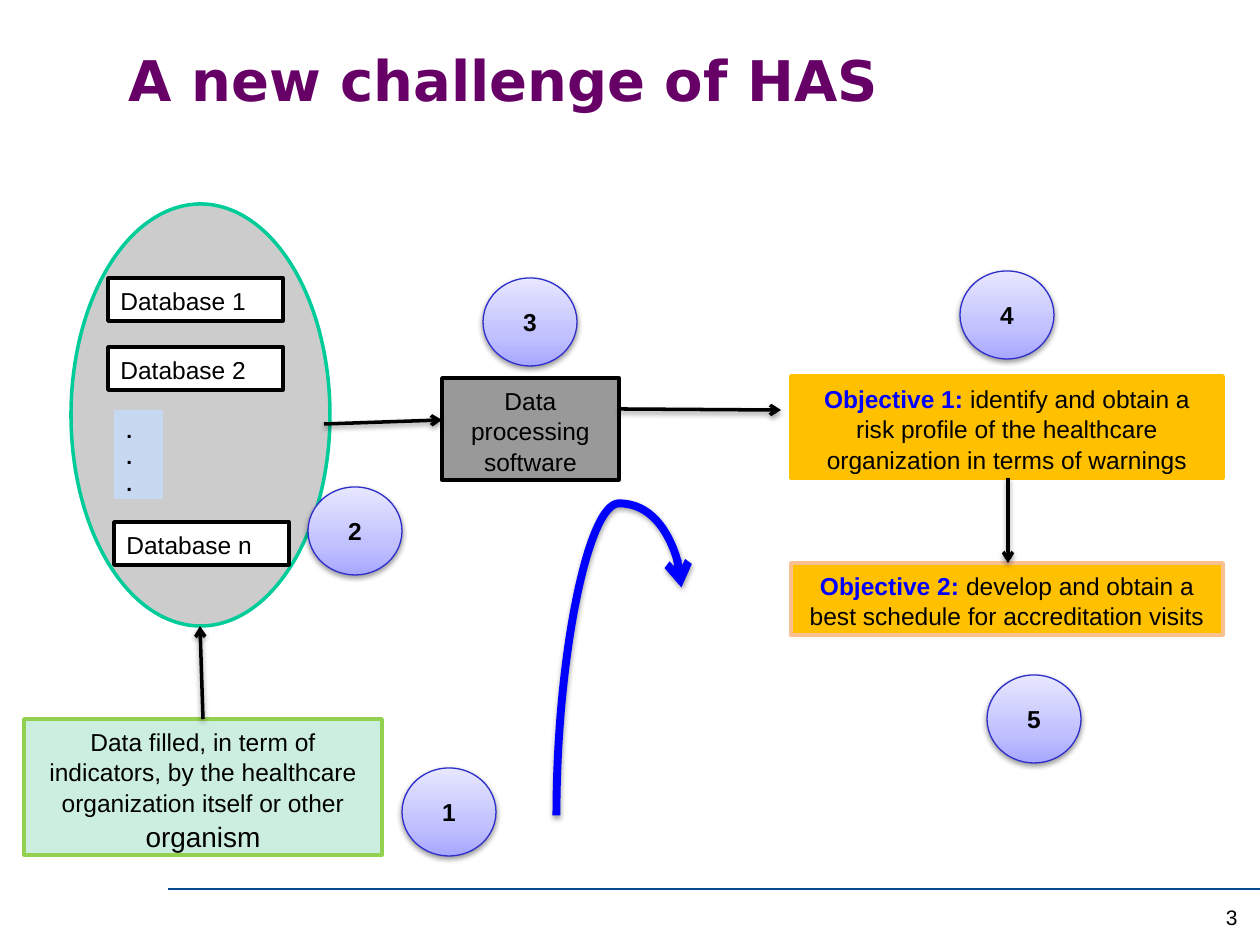
from copy import deepcopy

from lxml.etree import SubElement
from pptx import Presentation
from pptx.dml.color import RGBColor
from pptx.enum.shapes import MSO_CONNECTOR as CONNECTOR, MSO_SHAPE as SHAPE
from pptx.enum.text import MSO_ANCHOR as ANCHOR, PP_ALIGN as ALIGN
from pptx.oxml.ns import qn
from pptx.util import Pt

PX = 914400 / 126  # EMU in one pixel

BLACK = RGBColor(0x00, 0x00, 0x00)
WHITE = RGBColor(0xFF, 0xFF, 0xFF)
PURPLE = RGBColor(0x66, 0x00, 0x66)
BLUE = RGBColor(0x00, 0x00, 0xFF)
NAVY = RGBColor(0x00, 0x48, 0x90)
TEAL = RGBColor(0x00, 0xCC, 0x99)
LIGHT_GRAY = RGBColor(0xCC, 0xCC, 0xCC)
GRAY = RGBColor(0x99, 0x99, 0x99)
PALE_BLUE = RGBColor(0xC6, 0xD9, 0xF1)
MINT = RGBColor(0xCC, 0xEE, 0xDF)
GREEN = RGBColor(0x92, 0xD0, 0x50)
AMBER = RGBColor(0xFF, 0xC0, 0x00)
PEACH = RGBColor(0xFA, 0xC0, 0x90)
BADGE_LINE = RGBColor(0x2E, 0x2E, 0xCB)
BADGE_STOPS = [
    (0, RGBColor(0xA7, 0xA7, 0xFF)),
    (0.35, RGBColor(0xC1, 0xC1, 0xFF)),
    (1, RGBColor(0xE7, 0xE7, 0xFF)),
]


def add_text(shape, text, size=14, color=BLACK, bold=False, font="Arial",
             align=ALIGN.CENTER, anchor=ANCHOR.TOP, spacing=1.05):
    """Append a run to the last paragraph; each newline starts another one."""
    frame = shape.text_frame
    frame.word_wrap = True
    frame.vertical_anchor = anchor
    for index, line in enumerate(text.split("\n")):
        paragraph = frame.add_paragraph() if index else frame.paragraphs[-1]
        paragraph.alignment = align
        paragraph.line_spacing = spacing
        run = paragraph.add_run()
        run.text = line
        run.font.name = font
        run.font.size = Pt(size)
        run.font.bold = bold
        run.font.color.rgb = color


def add_shadow(shape):
    """Give a soft shadow straight below; call after the line is set."""
    properties = shape._element.spPr
    effects = SubElement(properties, qn("a:effectLst"))
    shadow = SubElement(effects, qn("a:outerShdw"), blurRad=str(Pt(3.1)),
                        dist=str(Pt(1.6)), dir="5400000", rotWithShape="0")
    color = SubElement(shadow, qn("a:srgbClr"), val="000000")
    SubElement(color, qn("a:alpha"), val="38000")


presentation = Presentation()
presentation.slide_width = round(1260 * PX)
presentation.slide_height = round(945 * PX)
slide = presentation.slides.add_slide(presentation.slide_layouts[5])
shapes = slide.shapes

# Footer rule, title and page number
rule = shapes.add_connector(
    CONNECTOR.STRAIGHT, *[round(v * PX) for v in (168, 889, 1260, 889)])
rule.line.color.rgb = NAVY
rule.line.width = Pt(0.75)
SubElement(rule._element.spPr, qn("a:effectLst"))

title = shapes.title
title.left, title.top, title.width, title.height = [
    round(v * PX) for v in (116, 0, 1071, 158)]
add_text(title, "A new challenge of HAS", size=32, color=PURPLE, bold=True,
         font="DejaVu Sans", align=ALIGN.LEFT, anchor=ANCHOR.MIDDLE, spacing=1)

page_number = shapes.add_textbox(*[round(v * PX) for v in (1092, 897, 158, 63)])
add_text(page_number, "3", size=12, align=ALIGN.RIGHT)

# Data store and process boxes: kind, frame, fill, outline, runs
left = {"align": ALIGN.LEFT}
lead = {"color": BLUE, "bold": True}
boxes = [
    (SHAPE.OVAL, (71, 204, 259, 422), LIGHT_GRAY, TEAL, []),
    (SHAPE.RECTANGLE, (114, 410, 49, 89), PALE_BLUE, None,
     [(".\n.\n.", {"size": 12, "bold": True, **left})]),
    (SHAPE.RECTANGLE, (24, 719, 358, 136), MINT, GREEN,
     [("Data filled, in term of indicators, by the healthcare "
       "organization itself or other ", {}), ("organism", {"size": 16})]),
    (SHAPE.RECTANGLE, (442, 378, 177, 102), GRAY, BLACK,
     [("Data processing software", {})]),
    (SHAPE.RECTANGLE, (791, 376, 432, 102), AMBER, AMBER,
     [("Objective 1:", lead),
      (" identify and obtain a risk profile of the healthcare "
       "organization in terms of warnings", {})]),
    (SHAPE.RECTANGLE, (791, 563, 432, 72), AMBER, PEACH,
     [("Objective 2: ", lead),
      ("develop and obtain a best schedule for accreditation visits", {})]),
    (SHAPE.RECTANGLE, (108, 278, 175, 43), WHITE, BLACK, [("Database 1", left)]),
    (SHAPE.RECTANGLE, (108, 347, 175, 43), WHITE, BLACK, [("Database 2", left)]),
    (SHAPE.RECTANGLE, (114, 522, 175, 43), WHITE, BLACK, [("Database n", left)]),
]
for kind, frame, fill, outline, runs in boxes:
    box = shapes.add_shape(kind, *[round(v * PX) for v in frame])
    box.shadow.inherit = False
    box.fill.solid()
    box.fill.fore_color.rgb = fill
    if outline is None:
        box.line.fill.background()
    else:
        box.line.color.rgb = outline
        box.line.width = Pt(2)
    for text, text_format in runs:
        add_text(box, text, **text_format)

# Numbered steps
for number, x, y in [(1, 402, 768), (4, 960, 271), (3, 483, 278),
                     (2, 308, 487), (5, 987, 675)]:
    badge = shapes.add_shape(
        SHAPE.OVAL, *[round(v * PX) for v in (x, y, 94, 88)])
    badge.fill.gradient()
    badge.fill.gradient_angle = 90
    stop_list = badge._element.spPr.find(".//" + qn("a:gsLst"))
    stop_list.insert(1, deepcopy(stop_list[0]))
    for stop, (position, color) in zip(badge.fill.gradient_stops, BADGE_STOPS):
        stop.position = position
        stop.color.rgb = color
    badge.line.color.rgb = BADGE_LINE
    badge.line.width = Pt(0.75)
    add_shadow(badge)
    add_text(badge, str(number), bold=True, anchor=ANCHOR.MIDDLE, spacing=1)

# Flow arrows; the curved one is turned a quarter after it is placed
arrows = [
    (CONNECTOR.STRAIGHT, (203, 719, 200, 626), BLACK, 2),
    (CONNECTOR.STRAIGHT, (324, 424, 442, 420), BLACK, 2),
    (CONNECTOR.STRAIGHT, (619, 409, 781, 410), BLACK, 2),
    (CONNECTOR.STRAIGHT, (1008, 478, 1008, 563), BLACK, 2),
    (CONNECTOR.CURVE, (733, 764, 505, 639), BLUE, 4.5),
]
for kind, ends, color, width in arrows:
    arrow = shapes.add_connector(kind, *[round(v * PX) for v in ends])
    arrow.line.color.rgb = color
    arrow.line.width = Pt(width)
    SubElement(arrow.line._get_or_add_ln(), qn("a:tailEnd"), type="arrow")
    add_shadow(arrow)
    if kind == CONNECTOR.CURVE:
        properties = arrow._element.spPr
        properties.get_or_add_xfrm().set("rot", "5400000")
        adjustments = properties.find(".//" + qn("a:avLst"))
        SubElement(adjustments, qn("a:gd"), name="adj1", fmla="val 136900")

presentation.save("out.pptx")
